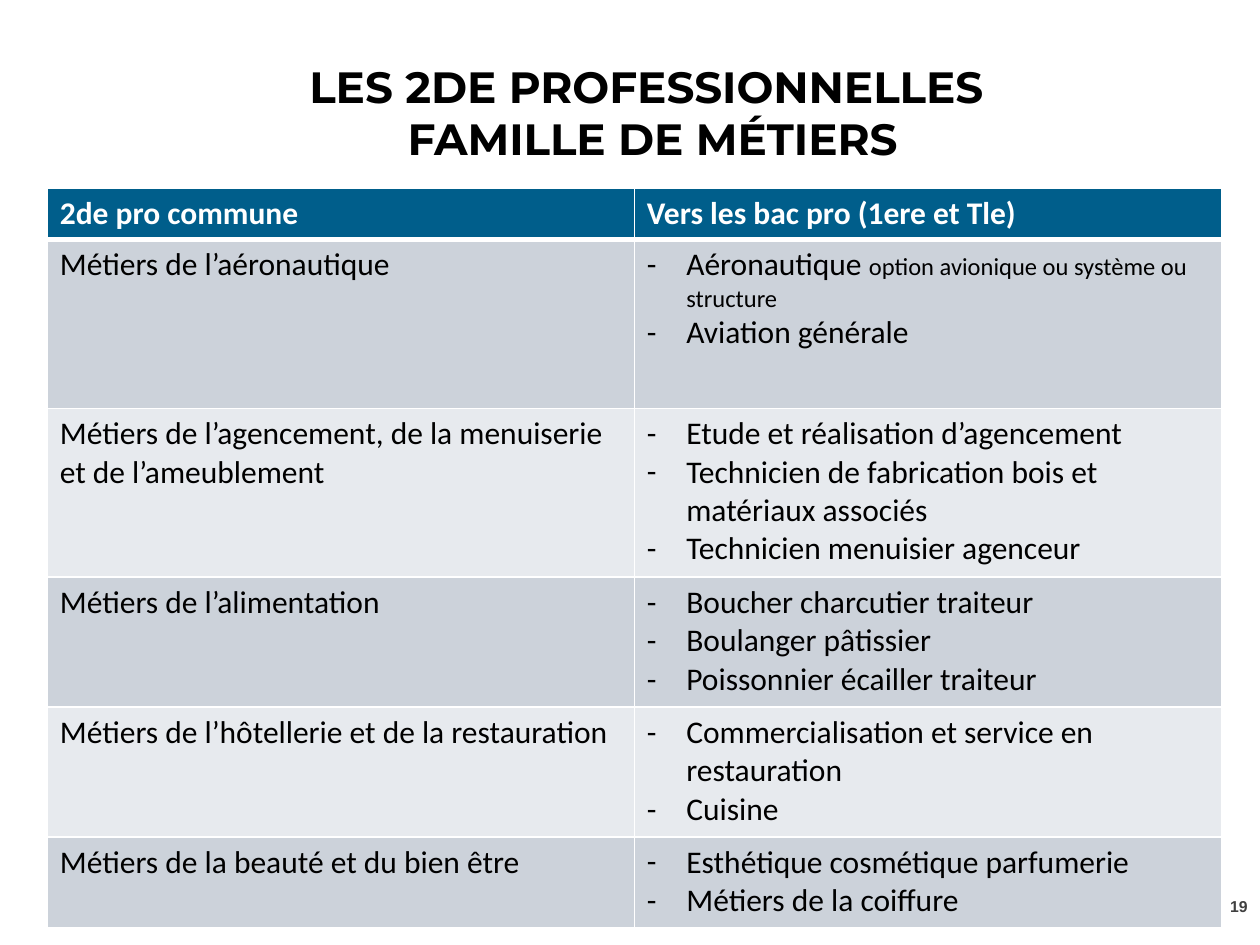
from lxml import etree
from pptx import Presentation
from pptx.dml.color import RGBColor
from pptx.enum import text
from pptx.oxml import ns
from pptx.util import Pt

BLACK = RGBColor(0x00, 0x00, 0x00)
WHITE = RGBColor(0xFF, 0xFF, 0xFF)
GREY = RGBColor(0x40, 0x40, 0x40)
BLUE = RGBColor(0x00, 0x5E, 0x8B)
DARK = RGBColor(0xCC, 0xD2, 0xDA)
LIGHT = RGBColor(0xE7, 0xEA, 0xEE)

HEAD = ["2de pro commune", "Vers les bac pro (1ere et Tle)"]
# Row height, family, then its courses with an optional small detail
ROWS = [
    (96.5, "Métiers de l’aéronautique",
     [("Aéronautique ", "option avionique ou système ou structure"),
      ("Aviation générale",)]),
    (96.5, "Métiers de l’agencement, de la menuiserie et de l’ameublement",
     [("Etude et réalisation d’agencement",),
      ("Technicien de fabrication bois et matériaux associés",),
      ("Technicien menuisier agenceur",)]),
    (74.2, "Métiers de l’alimentation",
     [("Boucher charcutier traiteur",),
      ("Boulanger pâtissier",),
      ("Poissonnier écailler traiteur",)]),
    (74.2, "Métiers de l’hôtellerie et de la restauration",
     [("Commercialisation et service en restauration",), ("Cuisine",)]),
    (51.8, "Métiers de la beauté et du bien être",
     [("Esthétique cosmétique parfumerie",), ("Métiers de la coiffure",)]),
]


def add_run(para, words, size, color, name="Calibri", bold=False):
    run = para.add_run()
    run.text = words
    font = run.font
    font.size, font.name, font.bold = Pt(size), name, bold
    font.color.rgb = color


def paint(cell, fill, top=1, bottom=1):
    """Give a cell its white borders, then its fill."""
    props = cell._tc.get_or_add_tcPr()
    for side, width in zip("LRTB", (1, 1, top, bottom)):
        line = etree.SubElement(props, ns.qn(f"a:ln{side}"), w=str(Pt(width)))
        solid = etree.SubElement(line, ns.qn("a:solidFill"))
        etree.SubElement(solid, ns.qn("a:srgbClr"), val=str(WHITE))
    cell.fill.solid()
    cell.fill.fore_color.rgb = fill


prs = Presentation()
prs.slide_width, prs.slide_height = Pt(720), Pt(540)
slide = prs.slides.add_slide(prs.slide_layouts[5])

# Title
title = slide.shapes.title
title.left, title.top, title.width, title.height = Pt(62.6), Pt(28), Pt(620.6), Pt(101.5)
frame = title.text_frame
frame.auto_size = text.MSO_AUTO_SIZE.NONE
frame.word_wrap = True
frame.vertical_anchor = text.MSO_ANCHOR.MIDDLE
frame.margin_bottom = Pt(33)
para = frame.paragraphs[0]
para.alignment = text.PP_ALIGN.CENTER
para.line_spacing = Pt(29.5)
add_run(para, "LES 2DE PROFESSIONNELLES ", 25, BLACK, "Montserrat", True)
para.add_line_break()
add_run(para, "FAMILLE DE MÉTIERS", 25, BLACK, "Montserrat", True)

# Page number
page = slide.shapes.add_textbox(Pt(675.4), Pt(503.3), Pt(44.6), Pt(28.8))
frame = page.text_frame
frame.word_wrap = True
frame.vertical_anchor = text.MSO_ANCHOR.MIDDLE
para = frame.paragraphs[0]
para.alignment = text.PP_ALIGN.RIGHT
add_run(para, "19", 9, GREY, "Arial", True)

# Table
table = slide.shapes.add_table(len(ROWS) + 1, 2, Pt(27), Pt(107.6), Pt(671), Pt(422.4)).table
for col in table.columns:
    col.width = Pt(335.5)

table.rows[0].height = Pt(29.2)
for cell, words in zip(table.rows[0].cells, HEAD):
    add_run(cell.text_frame.paragraphs[0], words, 18, WHITE, bold=True)
    paint(cell, BLUE, bottom=3)

for num, (height, family, courses) in enumerate(ROWS, 1):
    table.rows[num].height = Pt(height)
    left, right = table.rows[num].cells
    add_run(left.text_frame.paragraphs[0], family, 18, BLACK)
    frame = right.text_frame
    for pos, parts in enumerate(courses):
        para = frame.add_paragraph() if pos else frame.paragraphs[0]
        props = para._p.get_or_add_pPr()
        props.set("marL", str(Pt(22.5)))
        props.set("indent", str(Pt(-22.5)))
        etree.SubElement(props, ns.qn("a:buFont"), typeface="Calibri")
        etree.SubElement(props, ns.qn("a:buChar"), char="-")
        for words, size in zip(parts, (18, 14)):
            add_run(para, words, size, BLACK)
    for cell in (left, right):
        paint(cell, DARK if num % 2 else LIGHT, top=3 if num == 1 else 1)

prs.save("out.pptx")
